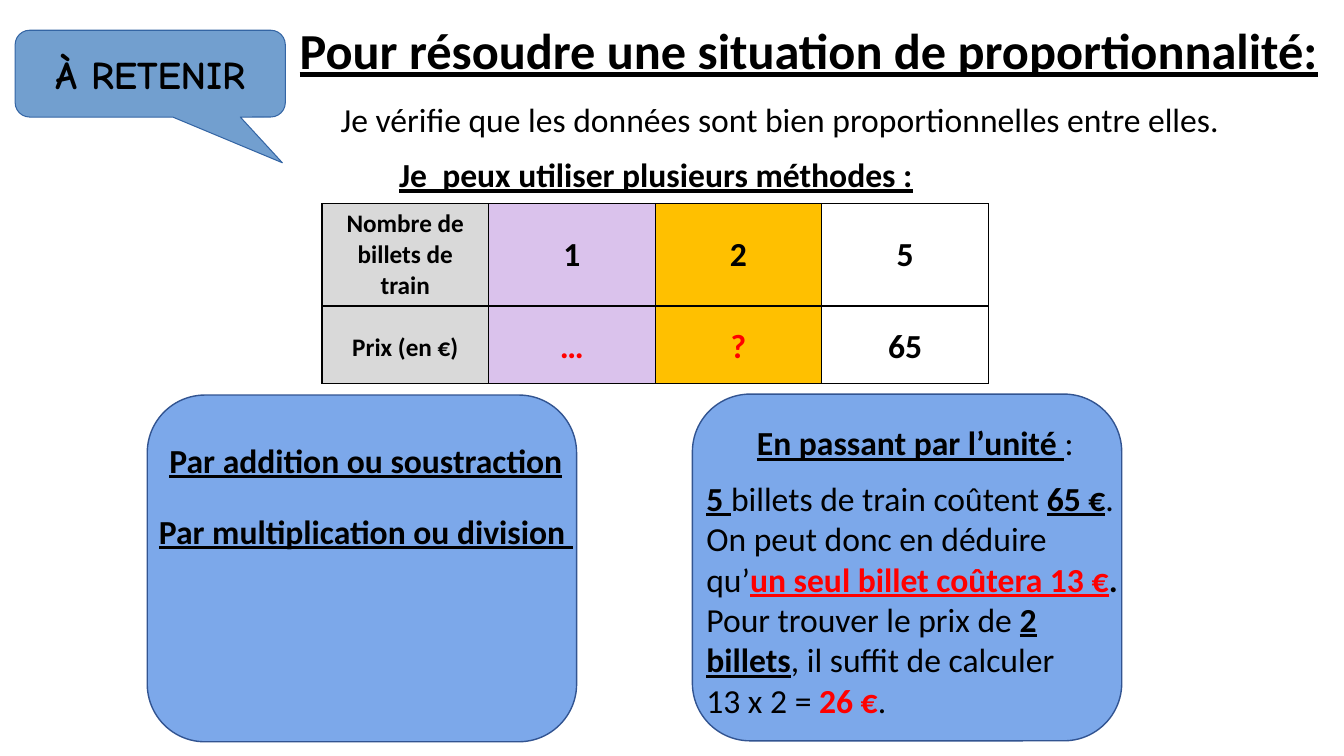
from dataclasses import dataclass

from lxml import etree
from pptx import Presentation
from pptx.dml.color import RGBColor
from pptx.enum.shapes import MSO_SHAPE
from pptx.enum.text import MSO_ANCHOR, MSO_AUTO_SIZE, PP_ALIGN
from pptx.oxml.ns import qn
from pptx.util import Pt

LEFT, CENTER = PP_ALIGN.LEFT, PP_ALIGN.CENTER
TOP, MIDDLE = MSO_ANCHOR.TOP, MSO_ANCHOR.MIDDLE
CALLOUT = MSO_SHAPE.ROUNDED_RECTANGULAR_CALLOUT
PANEL = MSO_SHAPE.ROUNDED_RECTANGLE
NO_AUTOFIT = MSO_AUTO_SIZE.NONE
TITLE_ONLY = 5


@dataclass(frozen=True)
class Theme:
    font: str = "Calibri"
    callout_font: str = "Comic Neue"
    title_size: int = 36
    callout_size: int = 28
    body_size: int = 24
    label_size: int = 18
    black: str = "000000"
    red: str = "FF0000"
    callout_fill: str = "729FCF"
    callout_line: str = "3465A4"
    panel_fill: str = "7CA8EA"
    panel_line: str = "325491"
    column_fills: tuple = ("D9D9D9", "DAC2EC", "FFC000", "FFFFFF")


THEME = Theme()

# Run styles: (bold, underlined, colour)
PLAIN = (False, False, THEME.black)
BOLD = (True, False, THEME.black)
KEY = (True, True, THEME.black)
RED = (True, False, THEME.red)
RED_KEY = (True, True, THEME.red)

# Paragraphs: (alignment, space before, runs)
TITLE = [(CENTER, 0, [("Pour résoudre une situation de proportionnalité:", KEY)])]
CALLOUT_TEXT = [(CENTER, 0, [("À RETENIR", BOLD)])]
CHECK = [(LEFT, 0, [
    ("Je vérifie que les données sont bien proportionnelles entre elles.", PLAIN)])]
METHODS = [(LEFT, 0, [("Je  peux utiliser plusieurs méthodes :", KEY)])]
OPERATIONS = [
    (CENTER, 0, [("Par addition ou soustraction", KEY)]),
    (CENTER, 22, [("Par multiplication ou division ", KEY)]),
]
UNIT_METHOD = [
    (CENTER, 0, [("En passant par l’unité ", KEY), (":", PLAIN)]),
    (LEFT, 11, [
        ("5 ", KEY), ("billets de train coûtent ", PLAIN), ("65 €", KEY),
        (". On peut donc en déduire qu’", PLAIN),
        ("un seul billet coûtera 13 €", RED_KEY), (".", BOLD)]),
    (LEFT, 0, [("Pour trouver le prix de ", PLAIN), ("2 billets", KEY),
               (", il suffit de calculer", PLAIN)]),
    (LEFT, 0, [("13 x 2 = ", PLAIN), ("26 €", RED), (".", PLAIN)]),
]
TICKETS = [
    [("Nombre de billets de train", BOLD), ("1", BOLD), ("2", BOLD), ("5", BOLD)],
    [("Prix (en €)", BOLD), ("…", RED), ("?", RED), ("65", BOLD)],
]

# Boxes: left, top, width, height in points
TITLE_BOX = (175, 10, 805.7, 51)
CALLOUT_BOX = (10.8, 21.6, 193, 62)
CALLOUT_TIP = (0.489, 1.027, 0.167)
PANEL_BOXES = [(105.2, 282.2, 306.7, 247.7), (494.6, 281.5, 306.7, 247.7)]
TEXT_BOXES = [
    (METHODS, (278, 106.5, 385, 36), False),
    (CHECK, (236.2, 67, 684, 36), True),
    (OPERATIONS, (103.7, 310.3, 315.4, 108.7), True),
    (UNIT_METHOD, (497.5, 298, 312.5, 250.6), True),
]
TABLE_LEFT, TABLE_TOP = 230, 145.5
COLUMN_WIDTH = 119
ROW_HEIGHTS = (72, 55.4)
ROW_BOTTOM_MARGINS = (3.6, 0)


def points(box):
    return [Pt(length) for length in box]


def color(value):
    return RGBColor.from_string(value)


def write(frame, paragraphs, size, font=THEME.font, anchor=TOP, wrap=True):
    frame.word_wrap = wrap
    frame.auto_size = NO_AUTOFIT
    frame.vertical_anchor = anchor
    fill_paragraphs(frame, paragraphs, size, font)


def fill_paragraphs(frame, paragraphs, size, font=THEME.font):
    for index, (alignment, space_before, runs) in enumerate(paragraphs):
        paragraph = frame.add_paragraph() if index else frame.paragraphs[0]
        paragraph.alignment = alignment
        paragraph.space_before = Pt(space_before)
        for text, (bold, underlined, run_color) in runs:
            run = paragraph.add_run()
            run.text = text
            run.font.name = font
            run.font.size = Pt(size)
            run.font.bold = bold
            run.font.underline = underlined
            run.font.color.rgb = color(run_color)


def add_outlined(slide, kind, box, fill, line, line_width):
    shape = slide.shapes.add_shape(kind, *points(box))
    shape.shadow.inherit = False
    shape.fill.solid()
    shape.fill.fore_color.rgb = color(fill)
    shape.line.color.rgb = color(line)
    shape.line.width = Pt(line_width)
    return shape


def add_borders(cell):
    properties = cell._tc.get_or_add_tcPr()
    for side in ("a:lnL", "a:lnR", "a:lnT", "a:lnB"):
        border = etree.SubElement(properties, qn(side), w=str(Pt(1)))
        fill = etree.SubElement(border, qn("a:solidFill"))
        etree.SubElement(fill, qn("a:srgbClr"), val=THEME.black)


def add_ticket_table(slide):
    columns = len(THEME.column_fills)
    box = (TABLE_LEFT, TABLE_TOP, COLUMN_WIDTH * columns, sum(ROW_HEIGHTS))
    table = slide.shapes.add_table(len(TICKETS), columns, *points(box)).table
    table.first_row = table.horz_banding = False
    for column in table.columns:
        column.width = Pt(COLUMN_WIDTH)
    for row_index, row in enumerate(TICKETS):
        table.rows[row_index].height = Pt(ROW_HEIGHTS[row_index])
        for column_index, run in enumerate(row):
            cell = table.cell(row_index, column_index)
            add_borders(cell)
            cell.fill.solid()
            cell.fill.fore_color.rgb = color(THEME.column_fills[column_index])
            cell.vertical_anchor = MIDDLE
            cell.margin_bottom = Pt(ROW_BOTTOM_MARGINS[row_index])
            size = THEME.body_size if column_index else THEME.label_size
            fill_paragraphs(cell.text_frame, [(CENTER, 0, [run])], size)


def main():
    presentation = Presentation()
    presentation.slide_width, presentation.slide_height = Pt(960), Pt(540)
    slide = presentation.slides.add_slide(presentation.slide_layouts[TITLE_ONLY])

    title = slide.shapes.title
    title.left, title.top, title.width, title.height = points(TITLE_BOX)
    write(title.text_frame, TITLE, THEME.title_size)

    callout = add_outlined(slide, CALLOUT, CALLOUT_BOX,
                           THEME.callout_fill, THEME.callout_line, 0.75)
    for index, value in enumerate(CALLOUT_TIP):
        callout.adjustments[index] = value
    write(callout.text_frame, CALLOUT_TEXT, THEME.callout_size,
          THEME.callout_font, MIDDLE, wrap=False)

    for box in PANEL_BOXES:
        add_outlined(slide, PANEL, box, THEME.panel_fill, THEME.panel_line, 1)
    for paragraphs, box, wrap in TEXT_BOXES:
        text_box = slide.shapes.add_textbox(*points(box))
        write(text_box.text_frame, paragraphs, THEME.body_size, wrap=wrap)
    add_ticket_table(slide)

    presentation.save("out.pptx")


if __name__ == "__main__":
    main()
